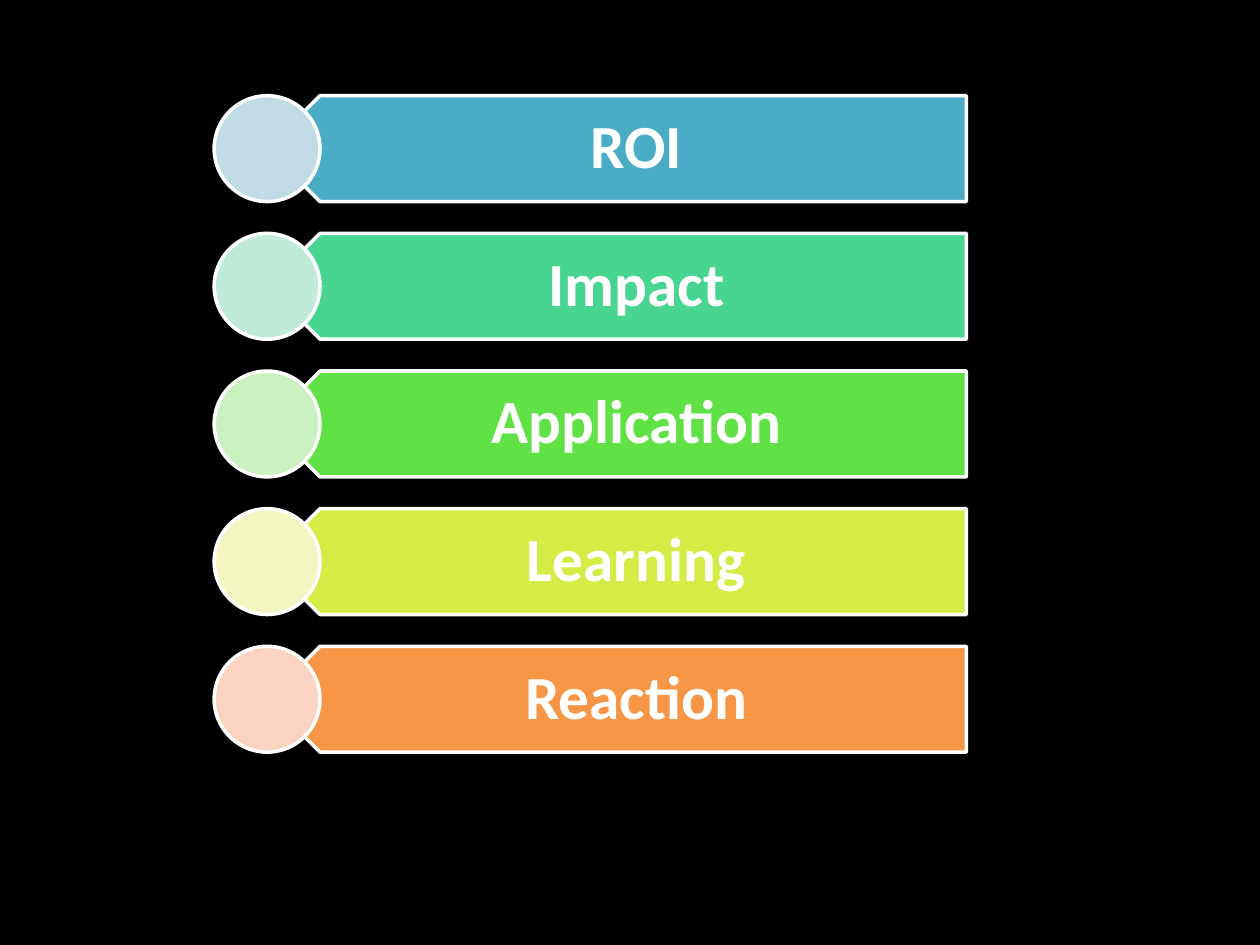
from pptx import Presentation
from pptx.dml.color import RGBColor
from pptx.enum.shapes import MSO_SHAPE
from pptx.enum.text import MSO_ANCHOR, PP_ALIGN
from pptx.util import Pt

PENTAGON = MSO_SHAPE.PENTAGON
OVAL = MSO_SHAPE.OVAL
MIDDLE = MSO_ANCHOR.MIDDLE
CENTER = PP_ALIGN.CENTER

COLORS = {"background": "000000", "white": "FFFFFF"}
LEVELS = [
    ("ROI", "4BACC6", "C1DBE5"),
    ("Impact", "48D491", "C0EBD8"),
    ("Application", "60E146", "CAF1C0"),
    ("Learning", "D5EC46", "F3F6C0"),
    ("Reaction", "F79646", "FBD3C1"),
]
FONT = "Calibri"
CIRCLE_LEFT = 122.4
FIRST_TOP = 54.7
BAR_HEIGHT = 60.5
BAR_WIDTH = 399.6
ROW_PITCH = 78.66


def add_filled_shape(slide, kind, left, top, width, fill):
    shape = slide.shapes.add_shape(kind, Pt(left), Pt(top), Pt(width), Pt(BAR_HEIGHT))
    shape.shadow.inherit = False
    shape.fill.solid()
    shape.fill.fore_color.rgb = RGBColor.from_string(fill)
    shape.line.color.rgb = RGBColor.from_string(COLORS["white"])
    shape.line.width = Pt(2)
    return shape


def add_label(shape, label):
    frame = shape.text_frame
    frame.text = label
    frame.word_wrap = True
    frame.vertical_anchor = MIDDLE
    frame.margin_left, frame.margin_right = Pt(26.7), Pt(19.4)
    frame.margin_top = frame.margin_bottom = Pt(10.8)
    paragraph = frame.paragraphs[0]
    paragraph.alignment = CENTER
    paragraph.line_spacing = 0.9
    font = paragraph.runs[0].font
    font.name = FONT
    font.size = Pt(35)
    font.bold = True
    font.color.rgb = RGBColor.from_string(COLORS["white"])


def main():
    presentation = Presentation()
    presentation.slide_width, presentation.slide_height = Pt(720), Pt(540)
    slide = presentation.slides.add_slide(presentation.slide_layouts[6])
    slide.background.fill.solid()
    slide.background.fill.fore_color.rgb = RGBColor.from_string(COLORS["background"])

    bar_left = CIRCLE_LEFT + BAR_HEIGHT / 2
    for row, (label, bar_color, circle_color) in enumerate(LEVELS):
        top = FIRST_TOP + row * ROW_PITCH
        bar = add_filled_shape(slide, PENTAGON, bar_left, top, BAR_WIDTH, bar_color)
        bar._element.spPr.xfrm.set("flipH", "1")
        add_label(bar, label)
        add_filled_shape(slide, OVAL, CIRCLE_LEFT, top, BAR_HEIGHT, circle_color)

    presentation.save("out.pptx")


if __name__ == "__main__":
    main()
